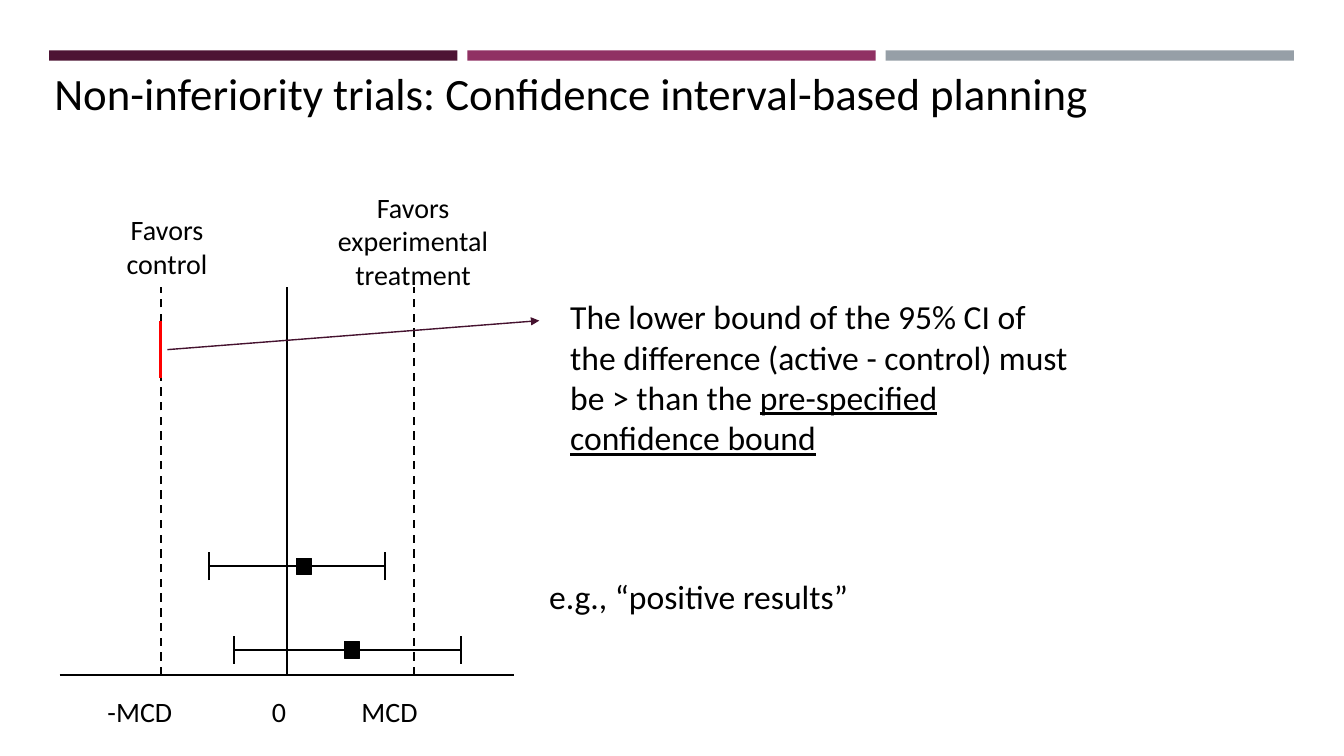
from dataclasses import dataclass
from typing import Optional

from lxml import etree
from pptx import Presentation
from pptx.dml.color import RGBColor
from pptx.enum import dml, shapes, text
from pptx.oxml import ns
from pptx.util import Cm, Pt


@dataclass(frozen=True)
class Theme:
    font: str = "Calibri"
    ink: str = "000000"
    arrow: str = "45122F"
    bound: str = "FF0000"
    bars: tuple[str, ...] = ("4D1434", "903163", "969FA7")
    title: float = 32
    body: float = 24
    label: float = 20


@dataclass(frozen=True)
class Trial:
    low: float
    estimate: float
    high: float
    y: float


@dataclass(frozen=True)
class Label:
    words: str
    left: float
    top: float
    width: float
    height: float
    centred: bool = False


THEME = Theme()
ZERO, MCD = 7.24, 3.19
PLOT_TOP, AXIS_Y = 7.24, 17.02
CAP = 0.35
MARKER_WIDTH, MARKER_HEIGHT = 0.38, 0.41
BAR_LEFT, BAR_STEP, BAR_WIDTH, BAR_HEIGHT = 1.24, 10.54, 10.29, 0.26

TRIALS = [Trial(5.26, 7.66, 9.7, 14.27), Trial(5.89, 8.88, 11.61, 16.38)]
LABELS = [
    Label("-MCD", 2.46, 17.37, 3.18, 1.14),
    Label("0", 6.6, 17.37, 1.27, 1.14),
    Label("MCD", 8.86, 17.37, 3.18, 1.14),
    Label("Favors control", 2.62, 5.23, 3.18, 2.03, True),
    Label("Favors experimental treatment", 8.05, 4.67, 4.72, 2.92, True),
]


def add_rectangle(page, left: float, top: float, width: float, height: float,
                  colour: str, outline: Optional[float] = None) -> None:
    box = page.shapes.add_shape(shapes.MSO_SHAPE.RECTANGLE, Cm(left), Cm(top), Cm(width), Cm(height))
    box.shadow.inherit = False
    box.fill.solid()
    box.fill.fore_color.rgb = RGBColor.from_string(colour)
    if outline is None:
        box.line.fill.background()
    else:
        box.line.color.rgb = RGBColor.from_string(colour)
        box.line.width = Pt(outline)


def add_line(page, x1: float, y1: float, x2: float, y2: float, *, colour: str = THEME.ink,
             width: float = 1.5, dashed: bool = False, arrow: bool = False) -> None:
    line = page.shapes.add_connector(shapes.MSO_CONNECTOR.STRAIGHT, Cm(x1), Cm(y1), Cm(x2), Cm(y2))
    line.line.color.rgb = RGBColor.from_string(colour)
    line.line.width = Pt(width)
    if dashed:
        line.line.dash_style = dml.MSO_LINE.DASH
    properties = line._element.spPr
    if arrow:
        etree.SubElement(properties.find(ns.qn("a:ln")), ns.qn("a:tailEnd"), type="triangle")
    etree.SubElement(properties, ns.qn("a:effectLst"))


def add_text(page, words: str, left: float, top: float, width: float, height: float, *,
             size: float, centred: bool = False, wrap: bool = True, underlined: str = "") -> None:
    box = page.shapes.add_textbox(Cm(left), Cm(top), Cm(width), Cm(height))
    box.text_frame.word_wrap = wrap
    box.text_frame.auto_size = text.MSO_AUTO_SIZE.SHAPE_TO_FIT_TEXT
    para = box.text_frame.paragraphs[0]
    para.alignment = text.PP_ALIGN.CENTER if centred else text.PP_ALIGN.LEFT
    for part, underline in ((words, False), (underlined, True)):
        if part:
            span = para.add_run()
            span.text = part
            span.font.name = THEME.font
            span.font.size = Pt(size)
            span.font.color.rgb = RGBColor.from_string(THEME.ink)
            span.font.underline = underline


def add_trial(page, trial: Trial) -> None:
    add_line(page, trial.low, trial.y, trial.high, trial.y)
    for end in (trial.low, trial.high):
        add_line(page, end, trial.y + CAP, end, trial.y - CAP)
    add_rectangle(page, trial.estimate - MARKER_WIDTH / 2, trial.y - MARKER_HEIGHT / 2,
                  MARKER_WIDTH, MARKER_HEIGHT, THEME.ink, outline=0.75)


def main() -> None:
    deck = Presentation()
    deck.slide_width, deck.slide_height = Cm(33.87), Cm(19.05)
    page = deck.slides.add_slide(deck.slide_layouts[6])

    for index, colour in enumerate(THEME.bars):
        add_rectangle(page, BAR_LEFT + index * BAR_STEP, 1.27, BAR_WIDTH, BAR_HEIGHT, colour)
    add_text(page, "Non-inferiority trials: Confidence interval-based planning",
             1.12, 1.52, 26.77, 1.63, size=THEME.title, wrap=False)

    add_line(page, 1.5, AXIS_Y, 12.95, AXIS_Y)
    for offset in (-MCD, 0, MCD):
        add_line(page, ZERO + offset, AXIS_Y, ZERO + offset, PLOT_TOP, dashed=offset != 0)
    for trial in TRIALS:
        add_trial(page, trial)
    for label in LABELS:
        add_text(page, label.words, label.left, label.top, label.width, label.height,
                 size=THEME.label, centred=label.centred)

    add_line(page, 4.22, 8.81, 13.59, 8.08, colour=THEME.arrow, width=1, arrow=True)
    add_line(page, ZERO - MCD, 8.08, ZERO - MCD, 9.53, colour=THEME.bound, width=2)
    add_text(page, "The lower bound of the 95% CI of the difference (active - control) must be > than the ",
             14.12, 7.34, 13.21, 5.38, size=THEME.body, underlined="pre-specified confidence bound")
    add_text(page, "e.g., “positive results”", 13.59, 14.38, 10.8, 1.27, size=THEME.body)

    deck.save("out.pptx")


if __name__ == "__main__":
    main()
